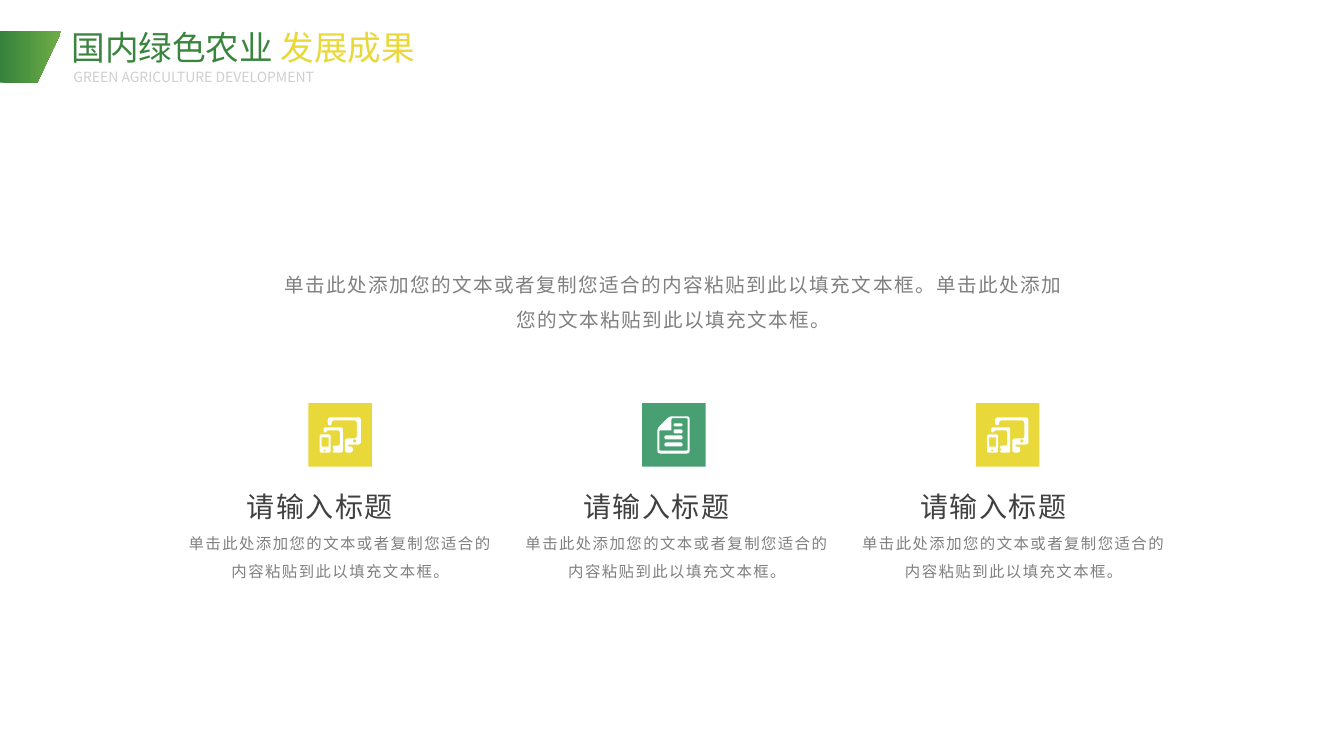
from dataclasses import dataclass
from math import dist

from lxml.etree import SubElement
from pptx import Presentation
from pptx.dml.color import RGBColor
from pptx.enum.shapes import MSO_SHAPE as Preset
from pptx.enum.text import MSO_ANCHOR as Anchor, MSO_AUTO_SIZE as AutoSize, PP_ALIGN as Align
from pptx.oxml.ns import qn
from pptx.util import Inches, Pt

FONT = "Noto Sans CJK SC"
YELLOW, GREEN, WHITE = "E8D83A", "479F72", "FFFFFF"
Point = tuple[float, float]


@dataclass(frozen=True)
class Box:
    left: float
    top: float
    width: float
    height: float


@dataclass(frozen=True)
class Style:
    size: int
    align: Align
    line_spacing: float = 1.0
    tracking: int = 0


@dataclass(frozen=True)
class Contour:
    corners: list[Point]
    radius: float = 0.0


@dataclass(frozen=True)
class Feature:
    color: str
    icon: list[Contour]
    heading: str = "请输入标题"
    detail: str = "单击此处添加您的文本或者复制您适合的内容粘贴到此以填充文本框。"


def block(left: float, top: float, right: float, bottom: float, radius: float = 0.0) -> Contour:
    return Contour([(left, top), (right, top), (right, bottom), (left, bottom)], radius)


DEVICES = [
    block(0.15, 0.46, 0.17, 0.48, 0.01),
    block(0.44, 0.36, 0.47, 0.39, 0.01),
    block(0.13, 0.34, 0.2, 0.43),
    block(0.11, 0.31, 0.22, 0.49, 0.02),
    Contour([(0.15, 0.24), (0.34, 0.24), (0.34, 0.49), (0.24, 0.49), (0.24, 0.47),
             (0.26, 0.46), (0.24, 0.45), (0.24, 0.42), (0.31, 0.42), (0.31, 0.27),
             (0.18, 0.27), (0.18, 0.29), (0.15, 0.29)], 0.02),
    Contour([(0.19, 0.14), (0.52, 0.14), (0.52, 0.41), (0.39, 0.41), (0.39, 0.43),
             (0.44, 0.43), (0.44, 0.49), (0.36, 0.49), (0.36, 0.35), (0.48, 0.35),
             (0.48, 0.17), (0.23, 0.17), (0.23, 0.22), (0.19, 0.22)], 0.03),
]
DOCUMENT = [
    block(0.22, 0.39, 0.4, 0.43, 0.02),
    block(0.22, 0.32, 0.4, 0.36, 0.02),
    block(0.31, 0.26, 0.4, 0.3, 0.02),
    block(0.31, 0.2, 0.4, 0.23, 0.02),
    Contour([(0.29, 0.15), (0.29, 0.27), (0.17, 0.27), (0.17, 0.47),
             (0.45, 0.47), (0.45, 0.15)], 0.01),
    Contour([(0.27, 0.13), (0.47, 0.13), (0.47, 0.5), (0.15, 0.5), (0.15, 0.25)], 0.03),
]
FEATURES = [Feature(YELLOW, DEVICES), Feature(GREEN, DOCUMENT), Feature(YELLOW, DEVICES)]


def rgb(color: str) -> RGBColor:
    return RGBColor.from_string(color)


def rounded(contour: Contour) -> list[Point]:
    corners, points = contour.corners, []
    if not contour.radius:
        return corners
    for index, corner in enumerate(corners):
        ends = []
        for neighbour in (corners[index - 1], corners[(index + 1) % len(corners)]):
            share = min(contour.radius / dist(corner, neighbour), 0.5)
            ends.append([c + (n - c) * share for c, n in zip(corner, neighbour)])
        for step in range(5):
            t = step / 4
            x, y = ((1 - t) ** 2 * a + 2 * t * (1 - t) * c + t ** 2 * b
                    for a, c, b in zip(ends[0], corner, ends[1]))
            points.append((x, y))
    return points


def draw_outline(slide, contours: list[Contour], left: float = 0, top: float = 0):
    paths = [[(Inches(left + x), Inches(top + y)) for x, y in rounded(contour)]
             for contour in contours]
    builder = slide.shapes.build_freeform(*paths[0][0], scale=1.0)
    for index, points in enumerate(paths):
        if index:
            builder.move_to(*points[0])
        builder.add_line_segments(points[1:], close=True)
    outline = builder.convert_to_shape()
    outline.shadow.inherit = False
    outline.line.fill.background()
    return outline


def paint(shape, color: str) -> None:
    shape.fill.solid()
    shape.fill.fore_color.rgb = rgb(color)


def place(shape, box: Box) -> None:
    for side in ("left", "top", "width", "height"):
        setattr(shape, side, Inches(getattr(box, side)))


def write(shape, box: Box, runs: list[tuple[str, str]], style: Style) -> None:
    place(shape, box)
    frame = shape.text_frame
    frame_format = {"word_wrap": True, "auto_size": AutoSize.SHAPE_TO_FIT_TEXT,
                    "vertical_anchor": Anchor.TOP}
    for name, value in frame_format.items():
        setattr(frame, name, value)
    paragraph = frame.paragraphs[0]
    paragraph_format = {"alignment": style.align, "line_spacing": style.line_spacing,
                        "space_before": Pt(0), "space_after": Pt(0)}
    for name, value in paragraph_format.items():
        setattr(paragraph, name, value)
    for text, color in runs:
        run = paragraph.add_run()
        run.text = text
        for name, value in {"name": FONT, "size": Pt(style.size), "bold": False}.items():
            setattr(run.font, name, value)
        run.font.color.rgb = rgb(color)
        properties = run.font._element
        SubElement(properties, qn("a:ea")).set("typeface", FONT)
        if style.tracking:
            properties.set("spc", str(style.tracking))


def write_box(slide, box: Box, text: str, color: str, style: Style) -> None:
    write(slide.shapes.add_textbox(0, 0, 0, 0), box, [(text, color)], style)


def draw_feature(slide, feature: Feature, index: int) -> None:
    tile_left, tile_top = 3.06 + 3.31 * index, 4
    text_left = 1.75 + 3.34 * index
    tile = slide.shapes.add_shape(Preset.RECTANGLE, 0, 0, 0, 0)
    place(tile, Box(tile_left, tile_top, 0.63, 0.63))
    tile.shadow.inherit = False
    tile.line.fill.background()
    paint(tile, feature.color)
    paint(draw_outline(slide, feature.icon, tile_left, tile_top), WHITE)
    write_box(slide, Box(text_left + 0.6, 4.81, 2.06, 0.44), feature.heading, "404040",
              Style(20, Align.JUSTIFY, tracking=100))
    write_box(slide, Box(text_left, 5.16, 3.25, 0.62), feature.detail, "808080",
              Style(11, Align.CENTER, 1.5, 100))


def main() -> None:
    deck = Presentation()
    deck.slide_width, deck.slide_height = Inches(13.33), Inches(7.5)
    slide = deck.slides.add_slide(deck.slide_layouts[1])

    banner = draw_outline(slide, [Contour([(0, 0.31), (0.61, 0.31), (0.37, 0.82), (0, 0.82)])])
    banner.fill.gradient()
    banner.fill.gradient_angle = 0
    for stop, color in zip(banner.fill.gradient_stops, ("35823C", "70AD47")):
        stop.color.rgb = rgb(color)

    write(slide.shapes.title, Box(0.61, 0.22, 3.94, 0.5),
          [("国内绿色农业 ", "39853D"), ("发展成果", YELLOW)], Style(24, Align.JUSTIFY))
    write_box(slide, Box(0.63, 0.63, 3.92, 0.27), "GREEN AGRICULTURE DEVELOPMENT", "D0CECE",
              Style(10, Align.JUSTIFY))

    intro = slide.placeholders[1]
    write(intro, Box(2.64, 2.54, 8.08, 0.77),
          [("单击此处添加您的文本或者复制您适合的内容粘贴到此以填充文本框。"
            "单击此处添加您的文本粘贴到此以填充文本框。", "808080")],
          Style(14, Align.CENTER, 1.5, 100))
    intro_properties = intro.text_frame.paragraphs[0]._p.get_or_add_pPr()
    for name in ("marL", "indent"):
        intro_properties.set(name, "0")
    SubElement(intro_properties, qn("a:buNone"))

    for index, feature in enumerate(FEATURES):
        draw_feature(slide, feature, index)
    deck.save("out.pptx")


if __name__ == "__main__":
    main()
